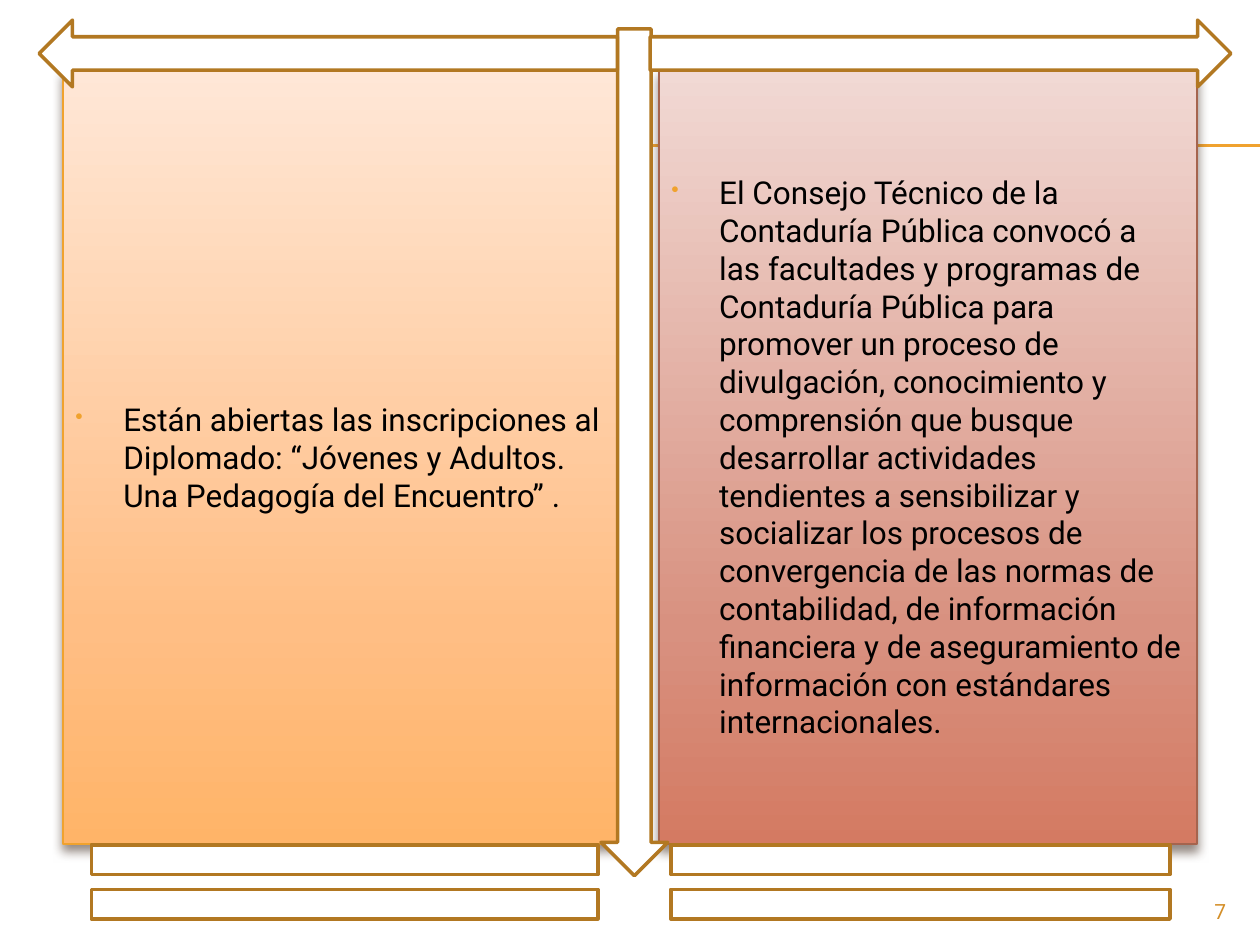
from copy import deepcopy

from lxml.etree import SubElement
from pptx import Presentation
from pptx.dml.color import RGBColor
from pptx.enum.shapes import MSO_CONNECTOR as Connector, MSO_SHAPE as Shape
from pptx.enum.text import MSO_ANCHOR as Anchor, PP_ALIGN as Align
from pptx.oxml.ns import qn
from pptx.util import Inches, Pt

COLORS = {
    "white": "FFFFFF", "text": "000000", "accent": "F0A22E", "outline": "B27822",
    "number": "D48F29", "brick": "A5644E", "shadow": "4E3B30",
}
PANEL_TOP, PANEL_HEIGHT = 0.55, 6.15
ARROW_TOP, ARROW_WIDTH = 0.16, 0.53
EQUAL_TOP, EQUAL_HEIGHT = 6.5, 1


class SlideBuilder:
    """Draws the announcement slide's elements in one shared style."""

    font = "Roboto"

    def __init__(self, slide):
        self.slide = slide

    def color(self, name):
        return RGBColor.from_string(COLORS[name])

    def line(self, left, right, y):
        connector = self.slide.shapes.add_connector(
            Connector.STRAIGHT, Inches(left), Inches(y), Inches(right), Inches(y))
        connector.line.color.rgb = self.color("accent")
        connector.line.width = Pt(0.75)
        SubElement(connector._element.spPr, qn("a:effectLst"))

    def shape(self, kind, left, top, width, height, outline="outline", weight=2):
        shape = self.slide.shapes.add_shape(
            kind, Inches(left), Inches(top), Inches(width), Inches(height))
        shape.shadow.inherit = False
        shape.fill.solid()
        shape.fill.fore_color.rgb = self.color("white")
        shape.line.color.rgb = self.color(outline)
        shape.line.width = Pt(weight)
        return shape

    def gradient(self, shape, stops):
        shape.fill.gradient()
        shape.fill.gradient_angle = 270
        stop_list = shape._element.spPr.find(".//" + qn("a:gsLst"))
        stop_list.append(deepcopy(stop_list[-1]))
        for stop, (position, value) in zip(shape.fill.gradient_stops, stops):
            stop.position = position
            stop.color.rgb = RGBColor.from_string(value)

    def drop_shadow(self, shape):
        effects = shape._element.spPr.find(qn("a:effectLst"))
        shadow = SubElement(effects, qn("a:outerShdw"), blurRad=str(Pt(6)),
                            dist=str(Pt(4)), dir="5400000", rotWithShape="0")
        color = SubElement(shadow, qn("a:srgbClr"), val=COLORS["shadow"])
        SubElement(color, qn("a:alpha"), val="60000")

    def bullet(self, paragraph):
        properties = paragraph._p.get_or_add_pPr()
        properties.set("marL", str(Inches(0.38)))
        properties.set("indent", str(Inches(-0.38)))
        color = SubElement(properties, qn("a:buClr"))
        SubElement(color, qn("a:srgbClr"), val=COLORS["accent"])
        SubElement(properties, qn("a:buSzPct"), val="70000")
        SubElement(properties, qn("a:buChar"), char="•")

    def text(self, shape, text, size, color, align):
        shape.text_frame.word_wrap = True
        shape.text_frame.text = text
        paragraph = shape.text_frame.paragraphs[0]
        paragraph.alignment = align
        font = paragraph.runs[0].font
        font.name, font.size = self.font, Pt(size)
        font.color.rgb = self.color(color)
        return paragraph

    def panel(self, left, width, outline, stops, text):
        shape = self.shape(Shape.RECTANGLE, left, PANEL_TOP, width, PANEL_HEIGHT, outline, 0.79)
        self.gradient(shape, stops)
        self.drop_shadow(shape)
        paragraph = self.text(shape, text, 18, "text", Align.LEFT)
        paragraph.space_before = Pt(3.6)
        self.bullet(paragraph)
        shape.text_frame.vertical_anchor = Anchor.MIDDLE

    def page_number(self, number):
        box = self.slide.shapes.add_textbox(Inches(9), Inches(7.08), Inches(0.83), Inches(0.27))
        self.text(box, number, 12, "number", Align.RIGHT)


def main():
    presentation = Presentation()
    presentation.slide_width, presentation.slide_height = Inches(10), Inches(7.5)
    builder = SlideBuilder(presentation.slides.add_slide(presentation.slide_layouts[6]))

    for y in (1.15, 1.16):
        builder.line(0.56, 10, y)

    builder.panel(
        0.5, 4.42, "accent", [(0, "FFE7D7"), (0.72, "FFBE84"), (1, "FFB468")],
        "Están abiertas las inscripciones al Diplomado: “Jóvenes y Adultos. "
        "Una Pedagogía del Encuentro” .")
    builder.panel(
        5.23, 4.27, "brick", [(0, "F1D9D4"), (0.72, "D89180"), (1, "D47A62")],
        "El Consejo Técnico de la Contaduría Pública convocó a las facultades y programas "
        "de Contaduría Pública para promover un proceso de divulgación, conocimiento y "
        "comprensión que busque desarrollar actividades tendientes a sensibilizar y "
        "socializar los procesos de convergencia de las normas de contabilidad, de "
        "información financiera y de aseguramiento de información con estándares "
        "internacionales.")

    builder.shape(Shape.DOWN_ARROW, 4.77, 0.23, ARROW_WIDTH, 6.72)
    builder.shape(Shape.RIGHT_ARROW, 5.16, ARROW_TOP, 4.61, ARROW_WIDTH)
    builder.shape(Shape.LEFT_ARROW, 0.31, ARROW_TOP, 4.59, ARROW_WIDTH)
    for left, width in ((0, 5.47), (4.61, 5.39)):
        builder.shape(Shape.MATH_EQUAL, left, EQUAL_TOP, width, EQUAL_HEIGHT)
    builder.page_number("7")

    presentation.save("out.pptx")


if __name__ == "__main__":
    main()
